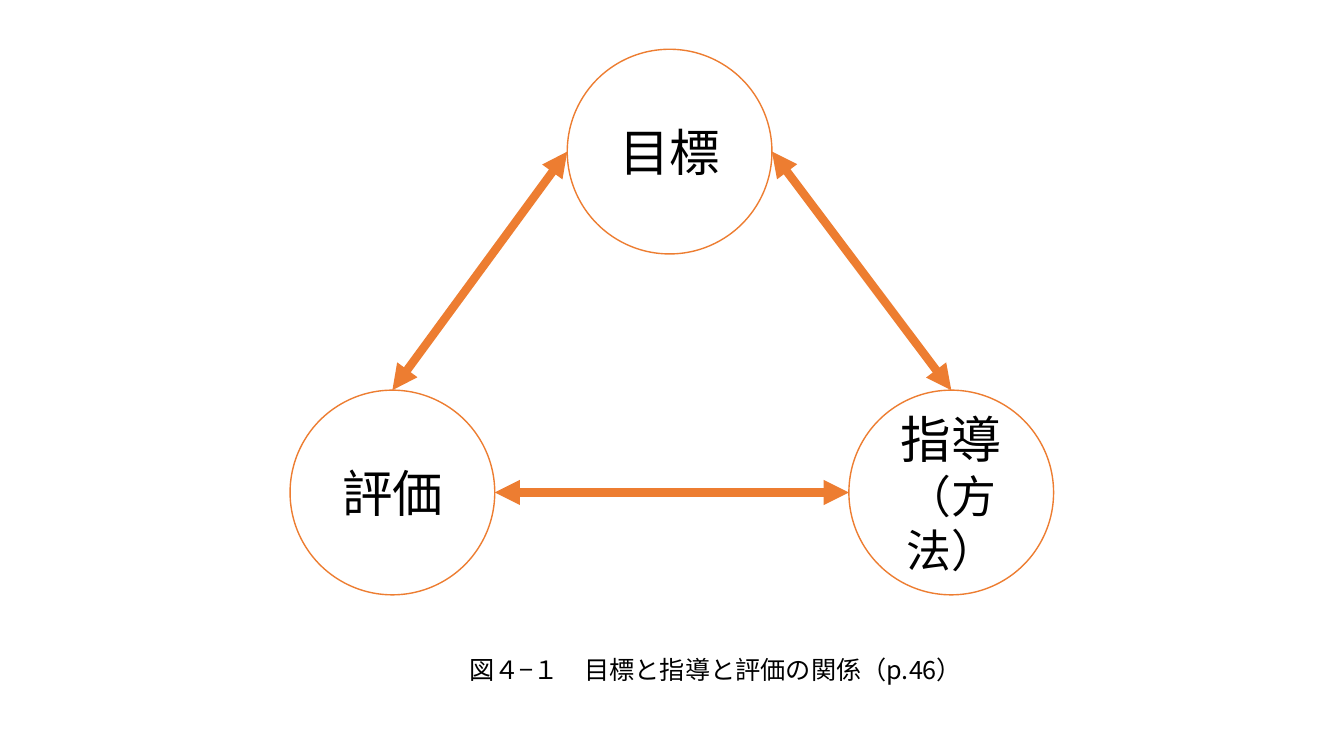
import pptx
import pptx.dml.color
import pptx.enum.shapes
import pptx.enum.text
import pptx.oxml.ns
import pptx.util
from lxml import etree

Pt = pptx.util.Pt
qn = pptx.oxml.ns.qn
ALIGN = pptx.enum.text.PP_ALIGN
ANCHOR = pptx.enum.text.MSO_ANCHOR

COLORS = {"accent": "ED7D31", "paper": "FFFFFF", "ink": "000000"}
FONT = "Noto Sans CJK JP"
DIAMETER = 146.2
RADIUS = DIAMETER / 2
LOWER_TOP = 278.7


def rgb(name):
    return pptx.dml.color.RGBColor.from_string(COLORS[name])


def write_text(frame, lines, *, align=ALIGN.LEFT, anchor=ANCHOR.TOP, wrap=True):
    """Write (text, size) lines into one paragraph."""
    frame.word_wrap = wrap
    frame.vertical_anchor = anchor
    paragraph = frame.paragraphs[0]
    paragraph.alignment = align
    for index, (text, size) in enumerate(lines):
        if index:
            paragraph.add_line_break()
        run = paragraph.add_run()
        run.text = text
        run.font.size = Pt(size)
        run.font.color.rgb = rgb("ink")
        run.font.name = FONT
        # East Asian glyphs take their font from a:ea
        etree.SubElement(run.font._element, qn("a:ea"), typeface=FONT)


def add_concept(slide, left, top, lines, side_margin=7.2):
    circle = slide.shapes.add_shape(
        pptx.enum.shapes.MSO_SHAPE.OVAL, Pt(left), Pt(top), Pt(DIAMETER), Pt(DIAMETER))
    circle.shadow.inherit = False
    circle.fill.solid()
    circle.fill.fore_color.rgb = rgb("paper")
    circle.line.color.rgb = rgb("accent")
    circle.line.width = Pt(1)
    frame = circle.text_frame
    frame.margin_left = frame.margin_right = Pt(side_margin)
    write_text(frame, lines, align=ALIGN.CENTER, anchor=ANCHOR.MIDDLE)


def add_double_arrow(slide, start, end):
    arrow = slide.shapes.add_connector(
        pptx.enum.shapes.MSO_CONNECTOR.STRAIGHT, *(Pt(value) for value in start + end))
    arrow.line.color.rgb = rgb("accent")
    arrow.line.width = Pt(6)
    outline = arrow.line._get_or_add_ln()
    for tag in ("a:headEnd", "a:tailEnd"):
        etree.SubElement(outline, qn(tag), type="triangle")
    etree.SubElement(arrow._element.spPr, qn("a:effectLst"))


def add_caption(slide, left, top, width, height, text):
    caption = slide.shapes.add_textbox(Pt(left), Pt(top), Pt(width), Pt(height))
    write_text(caption.text_frame, [(text, 18)], wrap=False)
    caption.text_frame.auto_size = pptx.enum.text.MSO_AUTO_SIZE.SHAPE_TO_FIT_TEXT


def main():
    deck = pptx.Presentation()
    deck.slide_width, deck.slide_height = Pt(960), Pt(540)
    slide = deck.slides.add_slide(deck.slide_layouts[6])

    # Three concepts at the corners of a triangle
    goal_left, goal_top = 405.2, 35.2
    evaluation_left, teaching_left = 207.2, 606.4
    add_concept(slide, goal_left, goal_top, [("目標", 36)])
    add_concept(slide, evaluation_left, LOWER_TOP, [("評価", 36)])
    add_concept(slide, teaching_left, LOWER_TOP,
                [("指導", 36), ("（方法）", 32)], side_margin=2.9)

    # Caption below the triangle
    add_caption(slide, 328.3, 463.7, 377.3, 29,
                "図４−１　目標と指導と評価の関係（p.46）")

    # Mutual relations between the concepts
    goal_middle = goal_top + RADIUS
    lower_middle = LOWER_TOP + RADIUS
    add_double_arrow(slide, (goal_left + DIAMETER, goal_middle),
                     (teaching_left + RADIUS, LOWER_TOP))
    add_double_arrow(slide, (goal_left, goal_middle),
                     (evaluation_left + RADIUS, LOWER_TOP))
    add_double_arrow(slide, (teaching_left, lower_middle),
                     (evaluation_left + DIAMETER, lower_middle))

    deck.save("out.pptx")


if __name__ == "__main__":
    main()
